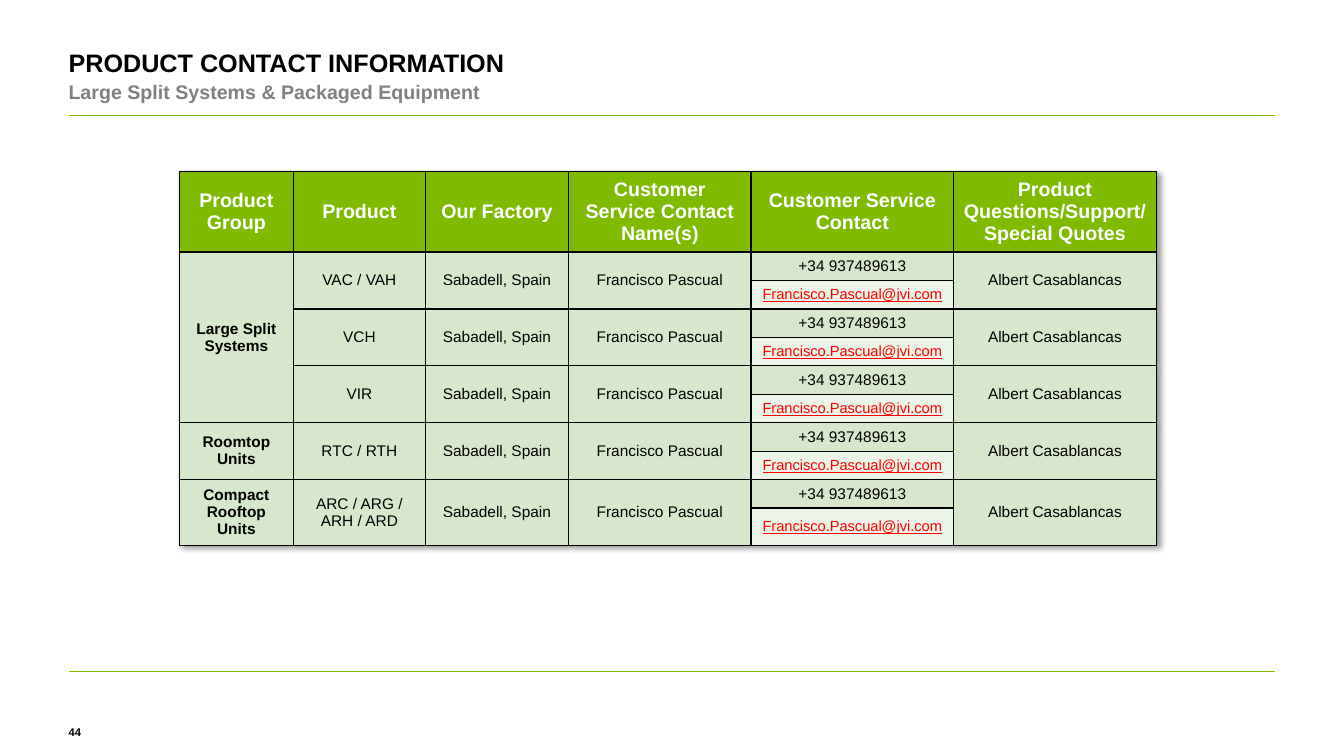
from dataclasses import dataclass
from lxml.etree import SubElement
from pptx import Presentation
from pptx.dml.color import RGBColor as RGB
from pptx.enum.shapes import MSO_CONNECTOR as Link
from pptx.enum.text import MSO_ANCHOR as Anchor, PP_ALIGN as Align
from pptx.oxml import parse_xml
from pptx.oxml.ns import nsdecls, qn
from pptx.util import Inches, Pt

TITLE = "PRODUCT CONTACT INFORMATION"
SUB = "Large Split Systems & Packaged Equipment"
PAGE = "44"
HEADS = ["Product Group", "Product", "Our Factory",
         "Customer Service Contact Name(s)", "Customer Service Contact",
         "Product Questions/Support/Special Quotes"]
GROUPS = [
    ("Large Split Systems", ["VAC / VAH", "VCH", "VIR"]),
    ("Roomtop Units", ["RTC / RTH"]),
    ("Compact Rooftop Units", ["ARC / ARG / ARH / ARD"]),
]
PLACE, AGENT = "Sabadell, Spain", "Francisco Pascual"
PHONE, MAIL = "+34 937489613", "Francisco.Pascual@jvi.com"
EXPERT = "Albert Casablancas"

LEFT, RIGHT = 0.68, 12.65
RULES = [1.15, 6.66]
TABLE_X, TABLE_Y = 1.78, 1.7
COLS = [1.13, 1.31, 1.42, 1.81, 2.01, 2.01]
HEAD_H, ROW_H, LAST_H = 0.8, 0.28, 0.37


@dataclass(frozen=True)
class Theme:
    font: str = "Arial"
    green: str = "7DBA00"
    pale: str = "D7E7CC"
    light: str = "ECF3E7"
    black: str = "000000"
    white: str = "FFFFFF"
    grey: str = "808080"
    red: str = "FF0000"
    title: float = 18
    head: float = 14
    body: float = 11
    mail: float = 10.5
    page: float = 8
    line: float = 0.75
    edge: float = 1


T = Theme()


def add_run(para, text, size, color, bold=False, under=False):
    run = para.add_run()
    run.text = text
    font = run.font
    font.name, font.size = T.font, Pt(size)
    font.bold, font.underline = bold, under
    font.color.rgb = RGB.from_string(color)


def add_box(slide, x, y, w, h, lines, gap=None):
    """Add a bold text box; lines holds (text, size, color)."""
    frame = slide.shapes.add_textbox(*map(Inches, (x, y, w, h))).text_frame
    frame.word_wrap = True
    frame.margin_left = frame.margin_right = 0
    frame.margin_top = frame.margin_bottom = 0
    for i, (text, size, color) in enumerate(lines):
        para = frame.add_paragraph() if i else frame.paragraphs[0]
        if gap:
            para.line_spacing = gap
        add_run(para, text, size, color, bold=True)


def add_rule(slide, y):
    line = slide.shapes.add_connector(
        Link.STRAIGHT, *map(Inches, (LEFT, y, RIGHT, y)))
    line.line.color.rgb = RGB.from_string(T.green)
    line.line.width = Pt(T.line)
    SubElement(line._element.spPr, qn("a:effectLst"))


def style(cell, fill):
    """Set the fill and the four borders of a cell."""
    cell.fill.solid()
    cell.fill.fore_color.rgb = RGB.from_string(fill)
    props = cell._tc.get_or_add_tcPr()
    for i, side in enumerate(("lnL", "lnR", "lnT", "lnB")):
        props.insert(i, parse_xml(
            f'<a:{side} {nsdecls("a")} w="{Pt(T.edge)}"><a:solidFill>'
            f'<a:srgbClr val="{T.black}"/></a:solidFill></a:{side}>'))


def put(cell, text, size=T.body, color=T.black, bold=False, under=False):
    cell.vertical_anchor = Anchor.MIDDLE
    para = cell.text_frame.paragraphs[0]
    para.alignment = Align.CENTER
    add_run(para, text, size, color, bold, under)


def add_shadow(table):
    table._tbl.tblPr.insert(0, parse_xml(
        f'<a:effectLst {nsdecls("a")}><a:outerShdw blurRad="50800" '
        'dist="38100" dir="2700000" algn="tl" rotWithShape="0">'
        f'<a:srgbClr val="{T.black}"><a:alpha val="40000"/></a:srgbClr>'
        '</a:outerShdw></a:effectLst>'))


def add_contacts(slide):
    count = sum(len(items) for _, items in GROUPS)
    rows = [HEAD_H] + [ROW_H] * (2 * count - 1) + [LAST_H]
    table = slide.shapes.add_table(
        len(rows), len(COLS),
        *map(Inches, (TABLE_X, TABLE_Y, sum(COLS), sum(rows)))).table
    add_shadow(table)
    for col, width in zip(table.columns, COLS):
        col.width = Inches(width)
    for row, height in zip(table.rows, rows):
        row.height = Inches(height)
    for r in range(len(rows)):
        for c in range(len(COLS)):
            mail = c == 4 and r and r % 2 == 0
            style(table.cell(r, c),
                  T.green if r == 0 else T.light if mail else T.pale)
    for c, text in enumerate(HEADS):
        put(table.cell(0, c), text, T.head, T.white, bold=True)
    top = 1
    for group, items in GROUPS:
        first = table.cell(top, 0)
        first.merge(table.cell(top + 2 * len(items) - 1, 0))
        put(first, group, bold=True)
        for item in items:
            for c, text in enumerate((item, PLACE, AGENT, PHONE, EXPERT), 1):
                cell = table.cell(top, c)
                if text != PHONE:
                    cell.merge(table.cell(top + 1, c))
                put(cell, text)
            put(table.cell(top + 1, 4), MAIL, T.mail, T.red, under=True)
            top += 2


def main():
    deck = Presentation()
    deck.slide_width, deck.slide_height = Inches(13.33), Inches(7.5)
    slide = deck.slides.add_slide(deck.slide_layouts[6])
    for y in RULES:
        add_rule(slide, y)
    add_box(slide, LEFT, 0.44, 7.64, 0.71,
            [(TITLE, T.title, T.black), (SUB, T.head, T.grey)], 1.1)
    add_contacts(slide)
    add_box(slide, LEFT, 7.2, 0.31, 0.14, [(PAGE, T.page, T.black)])
    deck.save("out.pptx")


if __name__ == "__main__":
    main()
